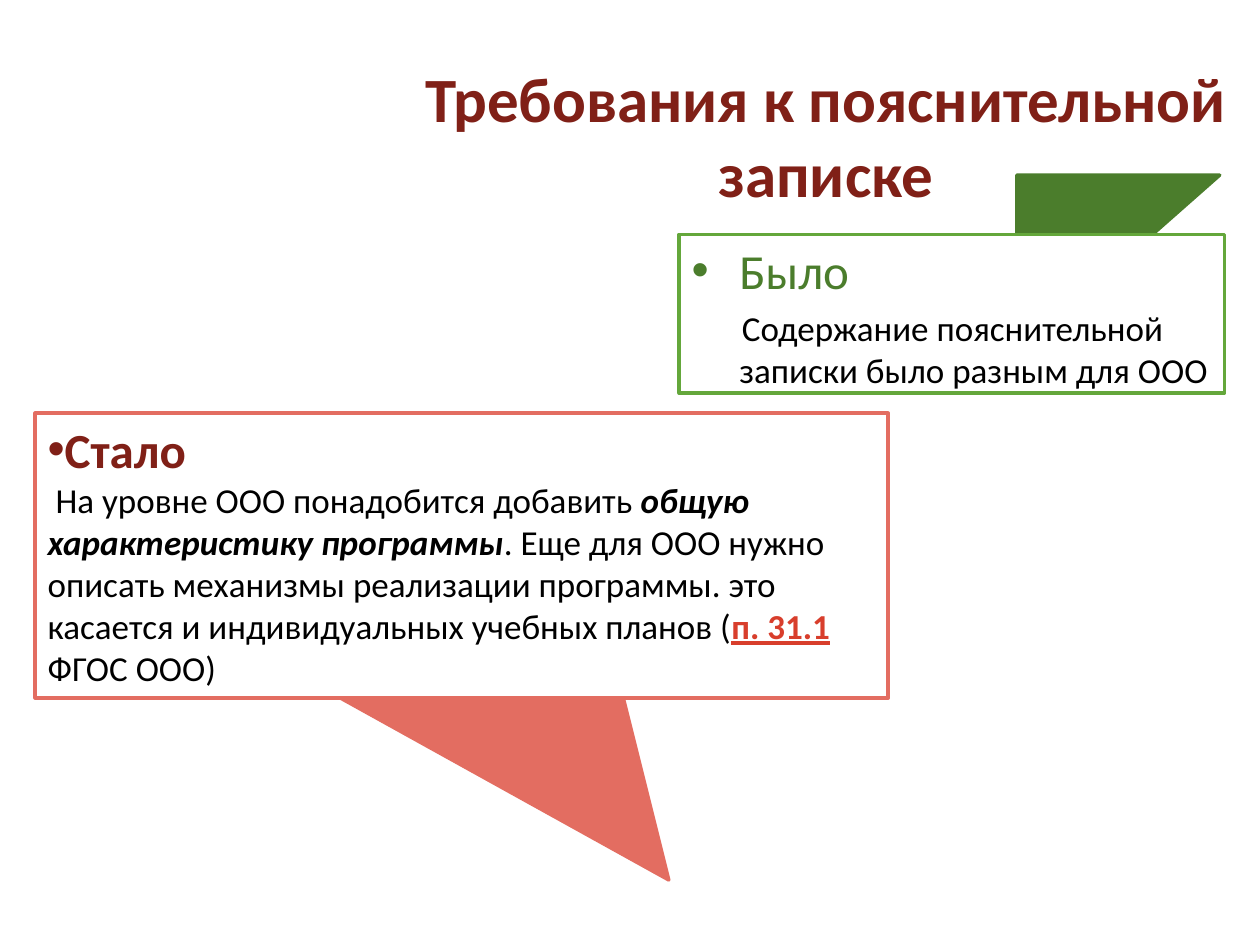
from pptx import Presentation
from pptx.util import Inches, Pt
from pptx.dml.color import RGBColor
from pptx.enum.shapes import MSO_SHAPE
from pptx.enum.text import MSO_ANCHOR, PP_ALIGN
from lxml.etree import SubElement
from pptx.oxml.ns import qn

HUE = {"green": "4B7D2C", "lime": "64A73B", "coral": "E36D61", "wine": "802017",
       "red": "D83E2C", "white": "FFFFFF", "black": "000000"}

deck = Presentation()
deck.slide_width, deck.slide_height = Inches(10), Inches(7.5)
slide = deck.slides.add_slide(deck.slide_layouts[6])
cell = deck.slide_width // 100  # grid of 100 columns by 75 rows


def draw(kind, grid, fill, line):
    shape = slide.shapes.add_shape(kind, *[int(n * cell) for n in grid])
    shape.shadow.inherit = False
    shape.fill.solid()
    shape.fill.fore_color.rgb = RGBColor.from_string(HUE[fill])
    shape.line.color.rgb = RGBColor.from_string(HUE[line])
    shape.line.width = Pt(2)
    SubElement(shape.line._get_or_add_ln(), qn("a:round"))
    frame = shape.text_frame
    frame.word_wrap = True
    frame.vertical_anchor = MSO_ANCHOR.TOP
    return shape


def write(para, parts, size, align=PP_ALIGN.LEFT):
    para.alignment = align
    for text, hue, style in parts:
        run = para.add_run()
        run.text = text
        font = run.font
        font.name, font.size = "Calibri", Pt(size)
        font.color.rgb = RGBColor.from_string(HUE[hue])
        font.bold, font.italic, font.underline = [key in style for key in "biu"]


# Triangles behind the boxes
tail = draw(MSO_SHAPE.ISOSCELES_TRIANGLE, (80.7, 13.9, 16.1, 14.2), "green", "green")
tail.adjustments[0] = 0
tail._element.spPr.xfrm.set("flipV", "1")
wedge = draw(MSO_SHAPE.ISOSCELES_TRIANGLE, (27, 45.8, 32.3, 17.3), "coral", "coral")
wedge.rotation = 29

# Title
title = slide.shapes.add_textbox(*[int(n * cell) for n in (31.1, 4.4, 68.9, 12.6)])
title.text_frame.word_wrap = True
title.text_frame.vertical_anchor = MSO_ANCHOR.MIDDLE
write(title.text_frame.paragraphs[0],
      [("Требования к пояснительной записке", "wine", "b")], 36, PP_ALIGN.CENTER)

# Before and after boxes: grid, line, heading, body, indents, gap
boxes = [
    ((53.9, 18.6, 43.3, 12.6), "lime", ("Было", "green", ""),
     [("Содержание пояснительной записки было разным для ООО", "black", "")],
     (0.38, -0.38, 0.02), 4),
    ((2.8, 32.8, 67.7, 22.6), "coral", ("Стало", "wine", "b"),
     [(" На уровне ООО понадобится добавить ", "black", ""),
      ("общую характеристику программы", "black", "bi"),
      (". Еще для ООО нужно описать механизмы реализации программы. "
       "это касается и индивидуальных учебных планов (", "black", ""),
      ("п. 31.1", "red", "bu"),
      (" ФГОС ООО)", "black", "")],
     (0, 0, 0), 0),
]
for grid, line, head, body, (left, hang, first), gap in boxes:
    frame = draw(MSO_SHAPE.RECTANGLE, grid, "white", line).text_frame
    top, rest = frame.paragraphs[0], frame.add_paragraph()
    for para, dent in ((top, hang), (rest, first)):
        props = para._p.get_or_add_pPr()
        props.set("marL", str(Inches(left)))
        props.set("indent", str(Inches(dent)))
    SubElement(top._p.pPr, qn("a:buFont"), typeface="Arial")
    SubElement(top._p.pPr, qn("a:buChar"), char="•")
    rest.space_before = Pt(gap)
    write(top, [head], 28)
    write(rest, body, 20)

deck.save("out.pptx")
